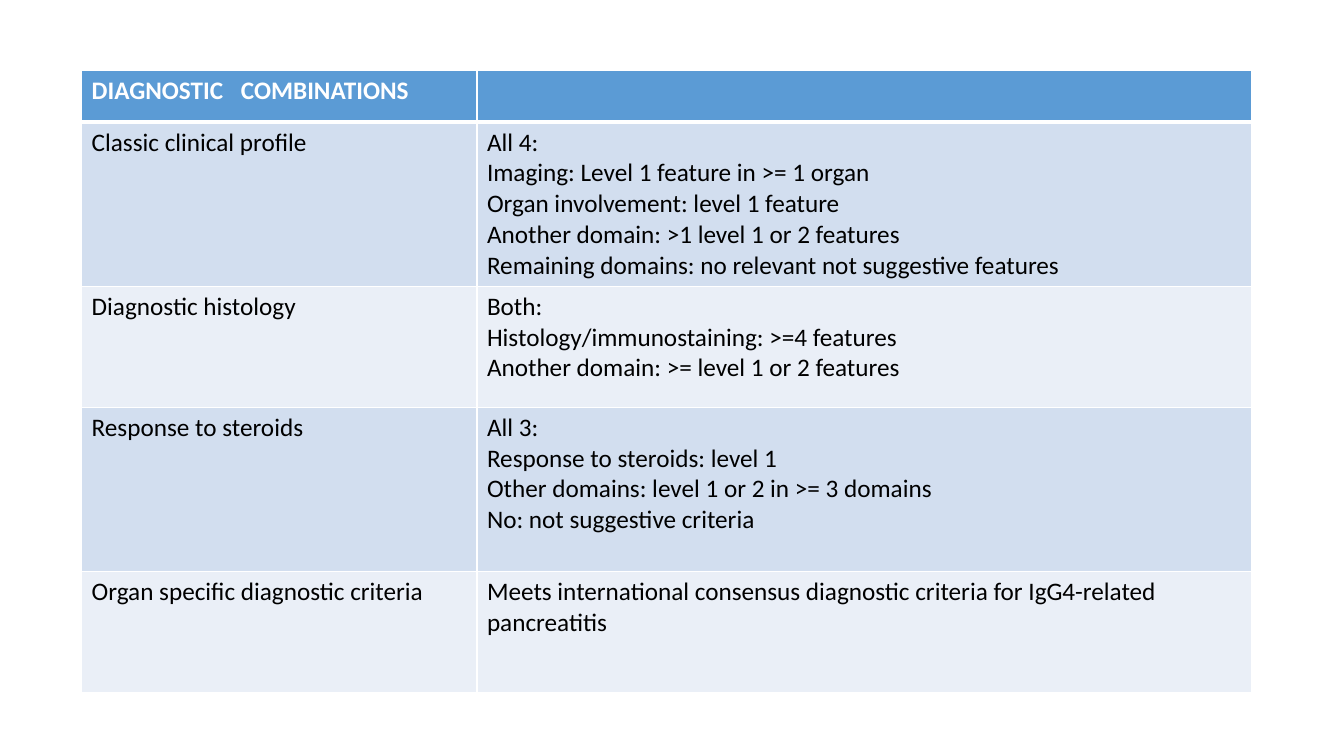
from lxml.etree import SubElement
from pptx import Presentation
from pptx.dml.color import RGBColor
from pptx.oxml.ns import qn
from pptx.util import Inches, Pt

COLORS = {"header": "5B9BD5", "odd": "D2DEEF", "even": "EAEFF7",
          "line": "FFFFFF", "header_text": "FFFFFF", "text": "000000"}
FONT = {"name": "Calibri", "size": Pt(18)}
COL_SHARES = (0.338, 0.662)
HEADER_HEIGHT = 0.51
ROW_HEIGHTS = {"odd": 1.63, "even": 1.2}
TAB_STOP = 1.48

HEADER = ("DIAGNOSTIC\tCOMBINATIONS", "")
COMBINATIONS = [
    ("Classic clinical profile",
     "All 4:\n"
     "Imaging: Level 1 feature in >= 1 organ\n"
     "Organ involvement: level 1 feature\n"
     "Another domain: >1 level 1 or 2 features\n"
     "Remaining domains: no relevant not suggestive features"),
    ("Diagnostic histology",
     "Both:\n"
     "Histology/immunostaining: >=4 features\n"
     "Another domain: >= level 1 or 2 features"),
    ("Response to steroids",
     "All 3:\n"
     "Response to steroids: level 1\n"
     "Other domains: level 1 or 2 in >= 3 domains\n"
     "No: not suggestive criteria"),
    ("Organ specific diagnostic criteria",
     "Meets international consensus diagnostic criteria for IgG4-related pancreatitis"),
]


def set_borders(cell, bottom):
    tcPr = cell._tc.get_or_add_tcPr()
    for side, width in {"L": 1, "R": 1, "T": 1, "B": bottom}.items():
        ln = SubElement(tcPr, qn(f"a:ln{side}"), w=str(Pt(width)))
        fill = SubElement(ln, qn("a:solidFill"))
        SubElement(fill, qn("a:srgbClr"), val=COLORS["line"])


def add_tab_stop(p, position):
    tabs = SubElement(p._p.get_or_add_pPr(), qn("a:tabLst"))
    SubElement(tabs, qn("a:tab"), pos=str(Inches(position)), algn="l")


def fill_cell(cell, text, band):
    is_header = band == "header"
    set_borders(cell, 3 if is_header else 1)
    cell.fill.solid()
    cell.fill.fore_color.rgb = RGBColor.from_string(COLORS[band])
    cell.text_frame.text = text
    for p in cell.text_frame.paragraphs:
        if "\t" in text:
            add_tab_stop(p, TAB_STOP)
        for font in [p.font] + [r.font for r in p.runs]:
            for key, value in {**FONT, "bold": is_header}.items():
                setattr(font, key, value)
            color = COLORS["header_text" if is_header else "text"]
            font.color.rgb = RGBColor.from_string(color)


def add_criteria_table(s, left, top, width):
    rows = [("header", HEADER_HEIGHT, HEADER)]
    for i, texts in enumerate(COMBINATIONS):
        band = "even" if i % 2 else "odd"
        rows.append((band, ROW_HEIGHTS[band], texts))
    height = sum(row[1] for row in rows)
    table = s.shapes.add_table(len(rows), len(COL_SHARES), Inches(left), Inches(top),
                               Inches(width), Inches(height)).table
    for column, share in zip(table.columns, COL_SHARES):
        column.width = Inches(width * share)
    for row, (band, row_height, texts) in zip(table.rows, rows):
        row.height = Inches(row_height)
        for cell, text in zip(row.cells, texts):
            fill_cell(cell, text, band)


def main():
    prs = Presentation()
    prs.slide_width, prs.slide_height = Inches(13.33), Inches(7.5)
    s = prs.slides.add_slide(prs.slide_layouts[6])
    add_criteria_table(s, 0.81, 0.7, 11.6)
    prs.save("out.pptx")


if __name__ == "__main__":
    main()
